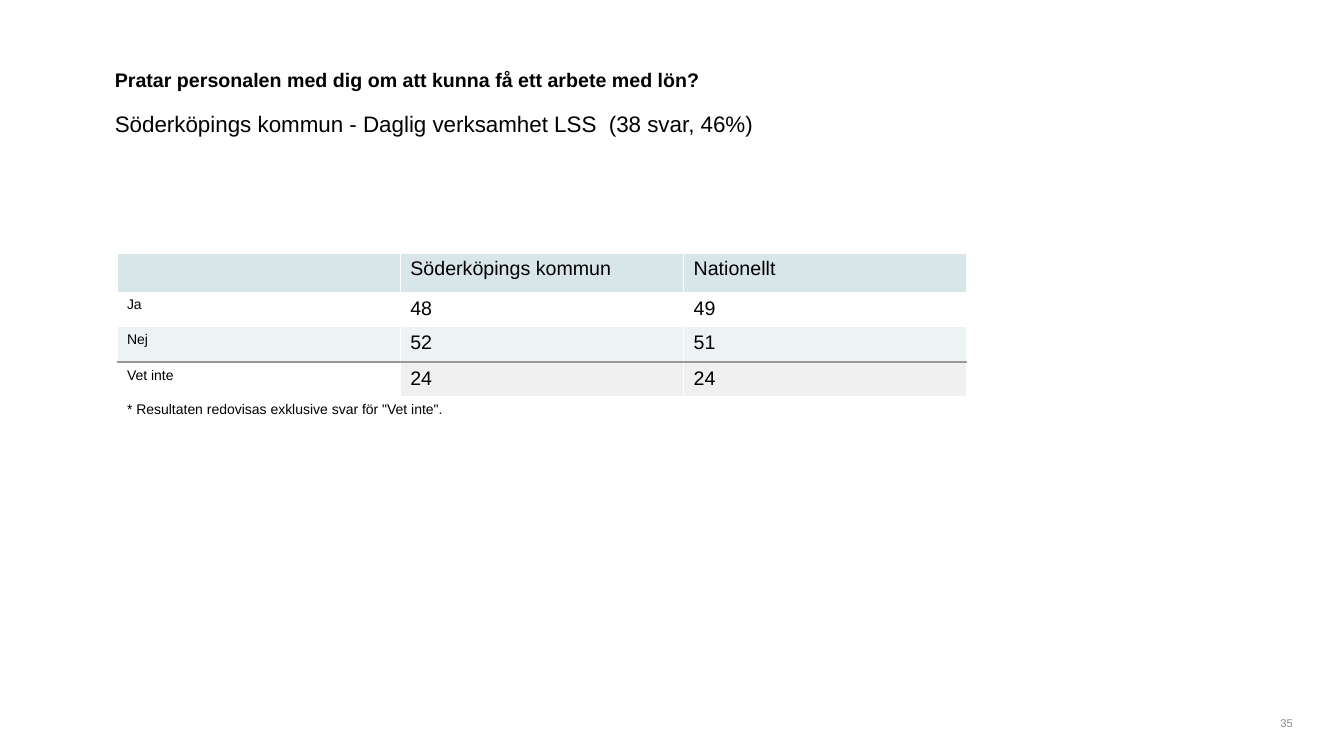
from dataclasses import dataclass

from lxml import etree
from pptx import Presentation
from pptx import util as u
from pptx.dml.color import RGBColor
from pptx.enum import text as t
from pptx.oxml.ns import qn

FONT = "Arial"
BLACK, WHITE, GREY = "000000", "FFFFFF", "898989"
HEADER, BAND, RULE, UNSURE = "D9E6E9", "EDF3F4", "999999", "F0F0F0"
COLUMN_WIDTH = 2.81
EDGES = "LRTB"


@dataclass(frozen=True)
class Label:
    wording: str
    box: tuple[float, float, float, float]
    size: float
    color: str = BLACK
    bold: bool = False
    align: t.PP_ALIGN = t.PP_ALIGN.LEFT
    anchor: t.MSO_ANCHOR = t.MSO_ANCHOR.TOP


@dataclass(frozen=True)
class Answer:
    texts: tuple[str, str, str]
    height: float
    fills: tuple[str | None, str | None, str | None] = (None, None, None)
    edges: str = EDGES
    merged: bool = False


LABELS = [
    Label("Pratar personalen med dig om att kunna få ett arbete med lön?",
          (1.04, 0.62, 11.25, 0.42), 14, bold=True),
    Label("Söderköpings kommun - Daglig verksamhet LSS  (38 svar, 46%)",
          (1.04, 1.04, 11.25, 0.42), 16),
    Label("35", (12.5, 7.08, 0.42, 0.21), 8, GREY,
          align=t.PP_ALIGN.RIGHT, anchor=t.MSO_ANCHOR.BOTTOM),
]

ANSWERS = [
    Answer(("", "Söderköpings kommun", "Nationellt"), 0.39, (HEADER,) * 3),
    Answer(("Ja", "48", "49"), 0.34),
    Answer(("Nej", "52", "51"), 0.34, (BAND,) * 3, edges="LRT"),
    Answer(("", "", ""), 0.02, (RULE,) * 3, edges="", merged=True),
    Answer(("Vet inte", "24", "24"), 0.34, (None, UNSURE, UNSURE), edges="LRB"),
    Answer(('* Resultaten redovisas exklusive svar för "Vet inte".', "", ""),
           0.34, merged=True),
]


def rgb(color: str) -> RGBColor:
    return RGBColor.from_string(color)


def add_run(paragraph, wording: str, size: float, color: str = BLACK, bold: bool = False) -> None:
    run = paragraph.add_run()
    run.text = wording
    run.font.name = FONT
    run.font.size = u.Pt(size)
    run.font.bold = bold
    run.font.color.rgb = rgb(color)


def draw_label(slide, label: Label) -> None:
    frame = slide.shapes.add_textbox(*map(u.Inches, label.box)).text_frame
    frame.word_wrap = True
    frame.vertical_anchor = label.anchor
    paragraph = frame.paragraphs[0]
    paragraph.alignment = label.align
    add_run(paragraph, label.wording, label.size, label.color, label.bold)


def draw_edges(cell, shown: str) -> None:
    properties = cell._tc.get_or_add_tcPr()
    for edge in EDGES:
        line = etree.SubElement(properties, qn(f"a:ln{edge}"), w=str(u.Pt(1)))
        if edge in shown:
            fill = etree.SubElement(line, qn("a:solidFill"))
            etree.SubElement(fill, qn("a:srgbClr"), val=WHITE)
        else:
            etree.SubElement(line, qn("a:noFill"))


def draw_cell(cell, wording: str, size: float, fill: str | None, edges: str) -> None:
    margin = u.Inches(0.05 if wording else 0)
    cell.margin_left = cell.margin_right = margin
    cell.margin_top = cell.margin_bottom = margin
    draw_edges(cell, edges)
    if fill:
        cell.fill.solid()
        cell.fill.fore_color.rgb = rgb(fill)
    else:
        cell.fill.background()
    paragraph = cell.text_frame.paragraphs[0]
    if wording:
        paragraph._p.get_or_add_pPr().set("marL", str(u.Inches(0.05)))
        add_run(paragraph, wording, size)
    else:
        etree.SubElement(paragraph._p, qn("a:endParaRPr"), sz="100")


def draw_answers(slide, answers: list[Answer]) -> None:
    columns = len(answers[0].texts)
    table = slide.shapes.add_table(
        len(answers), columns, u.Inches(1.16), u.Inches(2.51),
        u.Inches(COLUMN_WIDTH * columns),
        u.Inches(sum(answer.height for answer in answers))).table
    table.first_row = table.horz_banding = False
    for column in table.columns:
        column.width = u.Inches(COLUMN_WIDTH)
    for row, answer in enumerate(answers):
        table.rows[row].height = u.Inches(answer.height)
        for column, (wording, fill) in enumerate(zip(answer.texts, answer.fills)):
            size = 14 if column else 10
            draw_cell(table.cell(row, column), wording, size, fill, answer.edges)
        if answer.merged:
            table.cell(row, 0).merge(table.cell(row, columns - 1))


def main() -> None:
    deck = Presentation()
    deck.slide_width, deck.slide_height = u.Inches(13.33), u.Inches(7.5)
    slide = deck.slides.add_slide(deck.slide_layouts[6])
    for label in LABELS:
        draw_label(slide, label)
    draw_answers(slide, ANSWERS)
    deck.save("out.pptx")


if __name__ == "__main__":
    main()
